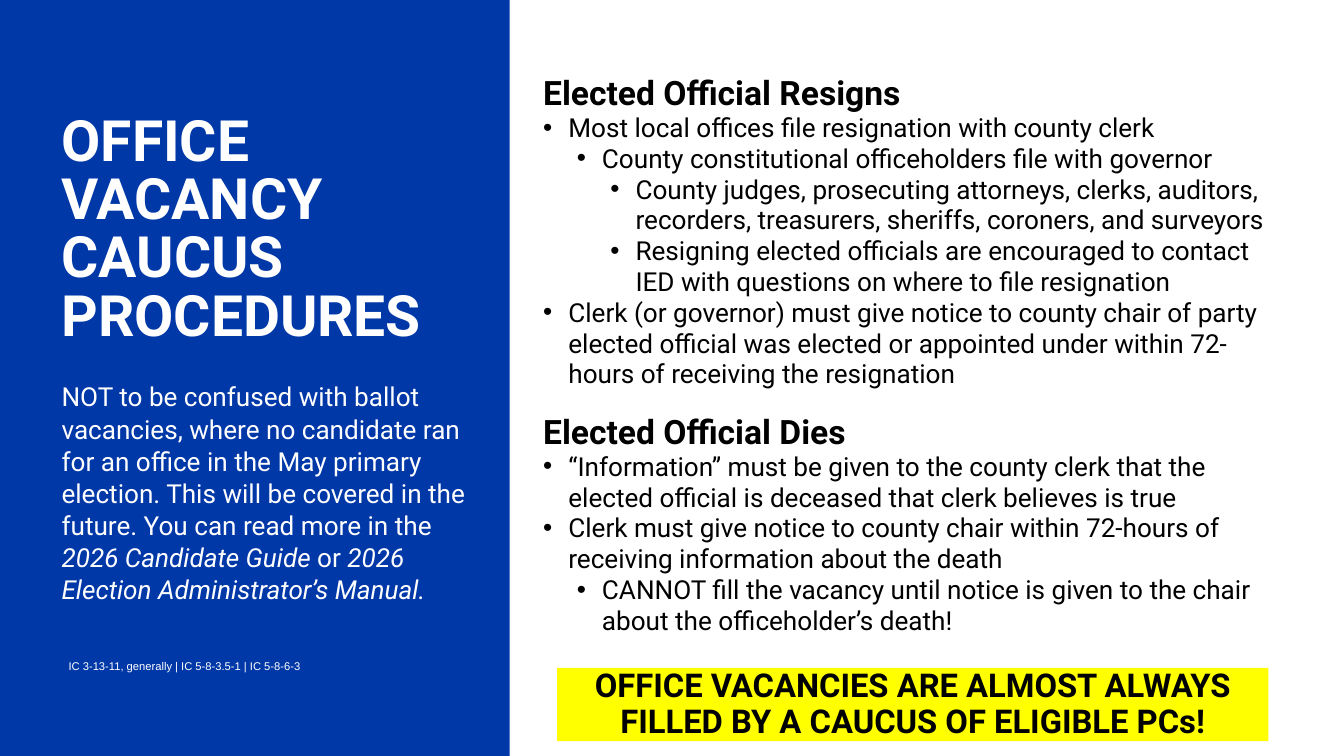
"""Build the office vacancy caucus procedures slide."""
from dataclasses import dataclass

from lxml import etree
from pptx import Presentation
from pptx import util as u
from pptx.dml.color import RGBColor
from pptx.enum import shapes, text
from pptx.oxml.ns import qn
from pptx.shapes.autoshape import Shape
from pptx.slide import Slide

EMU_PER_PX = 9525
HANGING_INDENT = 36
LEVEL_STEP = 48
COLORS = {"panel": "0038A8", "light": "FFFFFF", "dark": "000000", "highlight": "FFFF00"}


@dataclass(frozen=True)
class Box:
    left: int
    top: int
    width: int
    height: int

    def emu(self) -> tuple[int, ...]:
        return tuple(px(value) for value in (self.left, self.top, self.width, self.height))


@dataclass(frozen=True)
class Run:
    text: str
    italic: bool = False


@dataclass(frozen=True)
class Bullet:
    text: str
    level: int = 0


@dataclass(frozen=True)
class Section:
    heading: str
    bullets: tuple[Bullet, ...]


NOTE_RUNS = (
    Run("NOT to be confused with ballot vacancies, where no candidate ran for an office in the "
        "May primary election. This will be covered in the future. You can read more in the "),
    Run("2026 Candidate Guide", italic=True),
    Run(" or "),
    Run("2026 Election Administrator’s Manual.", italic=True),
)
SECTIONS = (
    Section("Elected Official Resigns", (
        Bullet("Most local offices file resignation with county clerk"),
        Bullet("County constitutional officeholders file with governor", 1),
        Bullet("County judges, prosecuting attorneys, clerks, auditors, recorders, treasurers, "
               "sheriffs, coroners, and surveyors", 2),
        Bullet("Resigning elected officials are encouraged to contact IED with questions on "
               "where to file resignation", 2),
        Bullet("Clerk (or governor) must give notice to county chair of party elected official "
               "was elected or appointed under within 72-hours of receiving the resignation"),
    )),
    Section("Elected Official Dies", (
        Bullet("“Information” must be given to the county clerk that the elected official is "
               "deceased that clerk believes is true"),
        Bullet("Clerk must give notice to county chair within 72-hours of receiving information "
               "about the death"),
        Bullet("CANNOT fill the vacancy until notice is given to the chair about the "
               "officeholder’s death!", 1),
    )),
)


def px(value: int) -> int:
    return value * EMU_PER_PX


def add_rectangle(slide: Slide, box: Box, color: str) -> Shape:
    shape = slide.shapes.add_shape(shapes.MSO_SHAPE.RECTANGLE, *box.emu())
    shape.shadow.inherit = False
    shape.fill.solid()
    shape.fill.fore_color.rgb = RGBColor.from_string(COLORS[color])
    shape.line.fill.background()
    return shape


def prepare_frame(shape: Shape, *, inset_x: int = 0, inset_y: int = 0,
                  anchor=text.MSO_ANCHOR.TOP) -> Shape:
    frame = shape.text_frame
    frame.word_wrap = True
    frame.margin_left = frame.margin_right = px(inset_x)
    frame.margin_top = frame.margin_bottom = px(inset_y)
    frame.vertical_anchor = anchor
    return shape


def add_text_box(slide: Slide, box: Box, **frame_format) -> Shape:
    return prepare_frame(slide.shapes.add_textbox(*box.emu()), **frame_format)


def set_bullet(paragraph, level: int) -> None:
    paragraph.level = level
    properties = paragraph._p.get_or_add_pPr()
    properties.set("marL", str(px(HANGING_INDENT + LEVEL_STEP * level)))
    properties.set("indent", str(-px(HANGING_INDENT)))
    etree.SubElement(properties, qn("a:buFont"), typeface="Arial")
    etree.SubElement(properties, qn("a:buChar"), char="•")


def write(shape: Shape, content: str | tuple[Run, ...], *, size: float, color: str,
          font: str = "Roboto", bold: bool = False, leading: float | None = None,
          before: float = 0, align=text.PP_ALIGN.LEFT, level: int | None = None) -> None:
    frame = shape.text_frame
    paragraph = frame.paragraphs[0]
    if paragraph.runs:
        paragraph = frame.add_paragraph()
    paragraph.alignment = align
    paragraph.space_before = u.Pt(before)
    if leading:
        paragraph.line_spacing = u.Pt(leading)
    if level is not None:
        set_bullet(paragraph, level)
    for part in (Run(content),) if isinstance(content, str) else content:
        run = paragraph.add_run()
        run.text = part.text
        run.font.name = font
        run.font.size = u.Pt(size)
        run.font.bold = bold
        run.font.italic = part.italic
        run.font.color.rgb = RGBColor.from_string(COLORS[color])


def draw_panel(slide: Slide) -> None:
    add_rectangle(slide, Box(-44, -48, 772, 1176), "panel")
    title = add_text_box(slide, Box(88, 164, 576, 334))
    write(title, "OFFICE VACANCY CAUCUS PROCEDURES", size=61, color="light", bold=True,
          leading=62.3)
    note = add_text_box(slide, Box(88, 543, 578, 318))
    write(note, NOTE_RUNS, size=28, color="light", leading=34.4)
    citation = add_text_box(slide, Box(88, 933, 432, 38), inset_x=10, inset_y=5,
                            anchor=text.MSO_ANCHOR.MIDDLE)
    write(citation, "IC 3-13-11, generally | IC 5-8-3.5-1 | IC 5-8-6-3", size=12,
          color="light", font="Arial")


def draw_sections(slide: Slide) -> None:
    outline = add_text_box(slide, Box(776, 116, 1056, 889))
    for index, section in enumerate(SECTIONS):
        write(outline, section.heading, size=36, color="dark", bold=True, leading=33,
              before=33 if index else 0)
        for bullet in section.bullets:
            write(outline, bullet.text, size=28, color="dark", leading=33, level=bullet.level)


def draw_banner(slide: Slide) -> None:
    banner = prepare_frame(add_rectangle(slide, Box(796, 954, 1016, 105), "highlight"))
    write(banner, "OFFICE VACANCIES ARE ALMOST ALWAYS FILLED BY A CAUCUS OF ELIGIBLE PCs!",
          size=35.1, color="dark", bold=True, leading=38.6, align=text.PP_ALIGN.CENTER)


def main() -> None:
    presentation = Presentation()
    presentation.slide_width, presentation.slide_height = px(1920), px(1080)
    slide = presentation.slides.add_slide(presentation.slide_layouts[6])
    draw_panel(slide)
    draw_sections(slide)
    draw_banner(slide)
    presentation.save("out.pptx")


if __name__ == "__main__":
    main()
